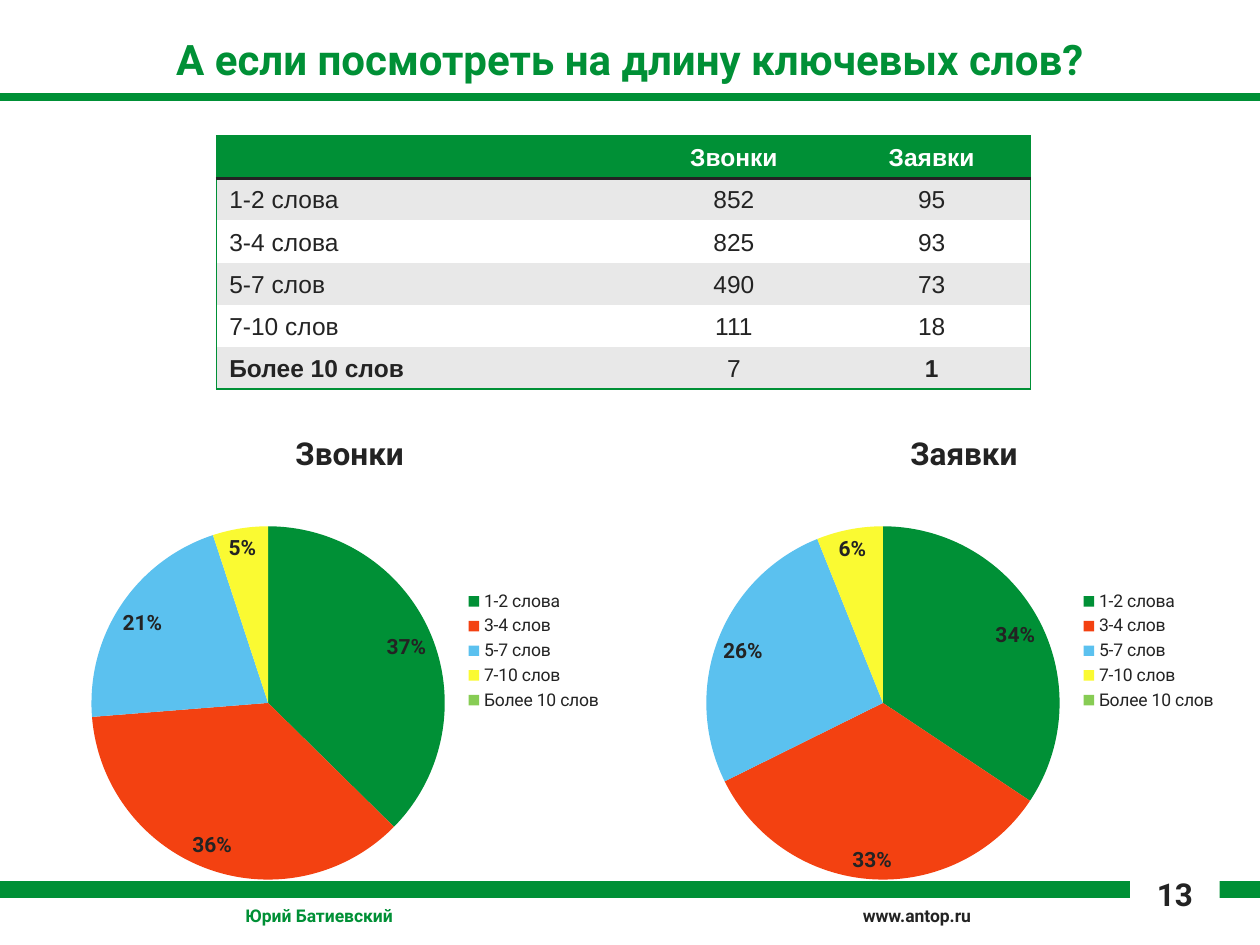
from lxml import etree
from pptx import Presentation
from pptx.chart.data import CategoryChartData
from pptx.dml.color import RGBColor
from pptx.enum.chart import XL_CHART_TYPE, XL_LABEL_POSITION, XL_LEGEND_POSITION
from pptx.enum.shapes import MSO_CONNECTOR, MSO_SHAPE
from pptx.enum.text import MSO_ANCHOR, PP_ALIGN
from pptx.oxml import parse_xml
from pptx.oxml.ns import nsdecls, qn
from pptx.util import Inches, Pt

# Content
TITLE = "А если посмотреть на длину ключевых слов?"
AUTHOR = "Юрий Батиевский"
SITE = "www.antop.ru"
PAGE = "13"
TABLE = [
    ("", "Звонки", "Заявки"),
    ("1-2 слова", "852", "95"),
    ("3-4 слова", "825", "93"),
    ("5-7 слов", "490", "73"),
    ("7-10 слов", "111", "18"),
    ("Более 10 слов", "7", "1"),
]
BOLD_CELLS = {(5, 0), (5, 2)}
COLUMN_WIDTHS = (3.32, 1.57, 1.57)
ROW_HEIGHT = 0.335
LENGTHS = ["1-2 слова", "3-4 слов", "5-7 слов", "7-10 слов", "Более 10 слов"]
PIES = [("Заявки", 5.46, (34, 33, 26, 6, 0)), ("Звонки", 0.58, (37, 36, 21, 5, 0))]

COLORS = {"green": "009036", "dark": "232323", "white": "FFFFFF", "band": "E8E8E8",
          "red": "F34111", "blue": "5BC1EF", "yellow": "FAFA32", "lime": "87CC54"}
SLICES = ("green", "red", "blue", "yellow", "lime")


def rgb(name):
    return RGBColor.from_string(COLORS[name])


def style(font, size, color, bold=False, face="Roboto"):
    font.size, font.bold, font.name = Pt(size), bold, face
    font.color.rgb = rgb(color)


def add_rule(y, width):
    rule = slide.shapes.add_connector(
        MSO_CONNECTOR.STRAIGHT, Inches(0), Inches(y), Inches(10), Inches(y))
    rule.line.color.rgb = rgb("green")
    rule.line.width = Pt(width)
    etree.SubElement(rule._element.spPr, qn("a:effectLst"))


def add_text(text, box, size, color, align=PP_ALIGN.LEFT, anchor=MSO_ANCHOR.TOP):
    frame = slide.shapes.add_textbox(*map(Inches, box)).text_frame
    frame.word_wrap = True
    frame.vertical_anchor = anchor
    paragraph = frame.paragraphs[0]
    paragraph.text = text
    paragraph.alignment = align
    style(paragraph.font, size, color, bold=True)
    return frame


def set_borders(cell, borders):
    """Borders map a side to (colour, points); the other sides have no line."""
    properties = cell._tc.get_or_add_tcPr()
    for index, side in enumerate("LRTB"):
        color, width = borders.get(side, (None, 0))
        fill = (f'<a:solidFill><a:srgbClr val="{COLORS[color]}"/></a:solidFill>'
                if color else "<a:noFill/>")
        properties.insert(index, parse_xml(
            f'<a:ln{side} {nsdecls("a")} w="{Pt(width)}">{fill}</a:ln{side}>'))


def set_layout(parent, inner=False, **fractions):
    """Place a chart part by fractions of the chart area."""
    target = '<c:layoutTarget val="inner"/>' if inner else ""
    modes = "".join(f'<c:{key}Mode val="edge"/>' for key in "xy")
    values = "".join(f'<c:{key} val="{value}"/>' for key, value in fractions.items())
    layout = parse_xml(f'<c:layout {nsdecls("c")}><c:manualLayout>{target}{modes}{values}'
                       '</c:manualLayout></c:layout>')
    for old in parent.findall(qn("c:layout")):
        parent.remove(old)
    text = parent.find(qn("c:tx"))
    parent.insert(0 if text is None else parent.index(text) + 1, layout)


def add_pie(name, left, shares):
    data = CategoryChartData()
    data.categories = LENGTHS
    data.add_series(name, shares)
    chart = slide.shapes.add_chart(
        XL_CHART_TYPE.PIE, Inches(left), Inches(3.19), Inches(4.3), Inches(3.95), data).chart
    style(chart.font, 10, "dark")

    chart.has_title = True
    heading = chart.chart_title.text_frame.paragraphs[0]
    heading.text = name
    style(heading.font, 18, "dark", bold=True)
    set_layout(chart.chart_title._element, x=0.4, y=0.05)

    chart.has_legend = True
    chart.legend.position = XL_LEGEND_POSITION.RIGHT
    chart.legend.include_in_layout = False
    style(chart.legend.font, 10, "dark")

    plot = chart.plots[0]
    plot.vary_by_categories = True
    set_layout(chart._chartSpace.chart.plotArea, inner=True, x=0.03, y=0.25, w=0.66, h=0.71)
    for index, color in enumerate(SLICES):
        fill = plot.series[0].points[index].format.fill
        fill.solid()
        fill.fore_color.rgb = rgb(color)

    plot.has_data_labels = True
    labels = plot.data_labels
    labels.show_percentage, labels.show_value = True, False
    labels.number_format, labels.number_format_is_linked = "0%", False
    labels.position = XL_LABEL_POSITION.BEST_FIT
    style(labels.font, 12, "dark", bold=True)


presentation = Presentation()
presentation.slide_width, presentation.slide_height = Inches(10), Inches(7.5)
slide = presentation.slides.add_slide(presentation.slide_layouts[6])

# Rules, title and footer
add_rule(7.06, 10)
add_rule(0.77, 5)
add_text(SITE, (6.75, 7.13, 2.43, 0.27), 10, "dark")
add_text(TITLE, (0.51, 0.21, 8.98, 0.51), 24, "green", PP_ALIGN.CENTER, MSO_ANCHOR.MIDDLE)
add_text(AUTHOR, (1.85, 7.13, 5.83, 0.27), 10, "green")

# Page number
page_box = slide.shapes.add_shape(
    MSO_SHAPE.RECTANGLE, Inches(8.97), Inches(6.85), Inches(0.71), Inches(0.65))
page_box.shadow.inherit = False
page_box.fill.solid()
page_box.fill.fore_color.rgb = rgb("white")
page_box.line.fill.background()
page_box.text_frame.vertical_anchor = MSO_ANCHOR.TOP
page_number = page_box.text_frame.paragraphs[0]
page_number.text = PAGE
page_number.alignment = PP_ALIGN.CENTER
page_number.line_spacing = 1.15
style(page_number.font, 18, "dark", bold=True)

# Table
last_row, last_column = len(TABLE) - 1, len(COLUMN_WIDTHS) - 1
table = slide.shapes.add_table(
    len(TABLE), len(COLUMN_WIDTHS), Inches(1.72), Inches(1.08),
    Inches(sum(COLUMN_WIDTHS)), Inches(ROW_HEIGHT * len(TABLE))).table
for column, width in zip(table.columns, COLUMN_WIDTHS):
    column.width = Inches(width)
for r, row in enumerate(TABLE):
    table.rows[r].height = Inches(ROW_HEIGHT)
    for c, text in enumerate(row):
        cell = table.cell(r, c)
        header = r == 0
        cell.fill.solid()
        cell.fill.fore_color.rgb = rgb("green" if header else "band" if r % 2 else "white")
        cell.vertical_anchor = MSO_ANCHOR.BOTTOM
        paragraph = cell.text_frame.paragraphs[0]
        paragraph.text = text
        paragraph.alignment = PP_ALIGN.CENTER if c else PP_ALIGN.LEFT
        style(paragraph.font, 14, "white" if header else "dark",
              header or (r, c) in BOLD_CELLS, "Arial")

        borders = {}
        if c == 0:
            borders["L"] = ("green", 1)
        if c == last_column:
            borders["R"] = ("green", 1)
        if header:
            borders.update(T=("green", 1), B=("dark", 2))
        elif r == 1:
            borders["T"] = ("dark", 2)
        if r == last_row:
            borders["B"] = ("green", 1)
        set_borders(cell, borders)

# Pie charts
for name, left, shares in PIES:
    add_pie(name, left, shares)

presentation.save("out.pptx")
